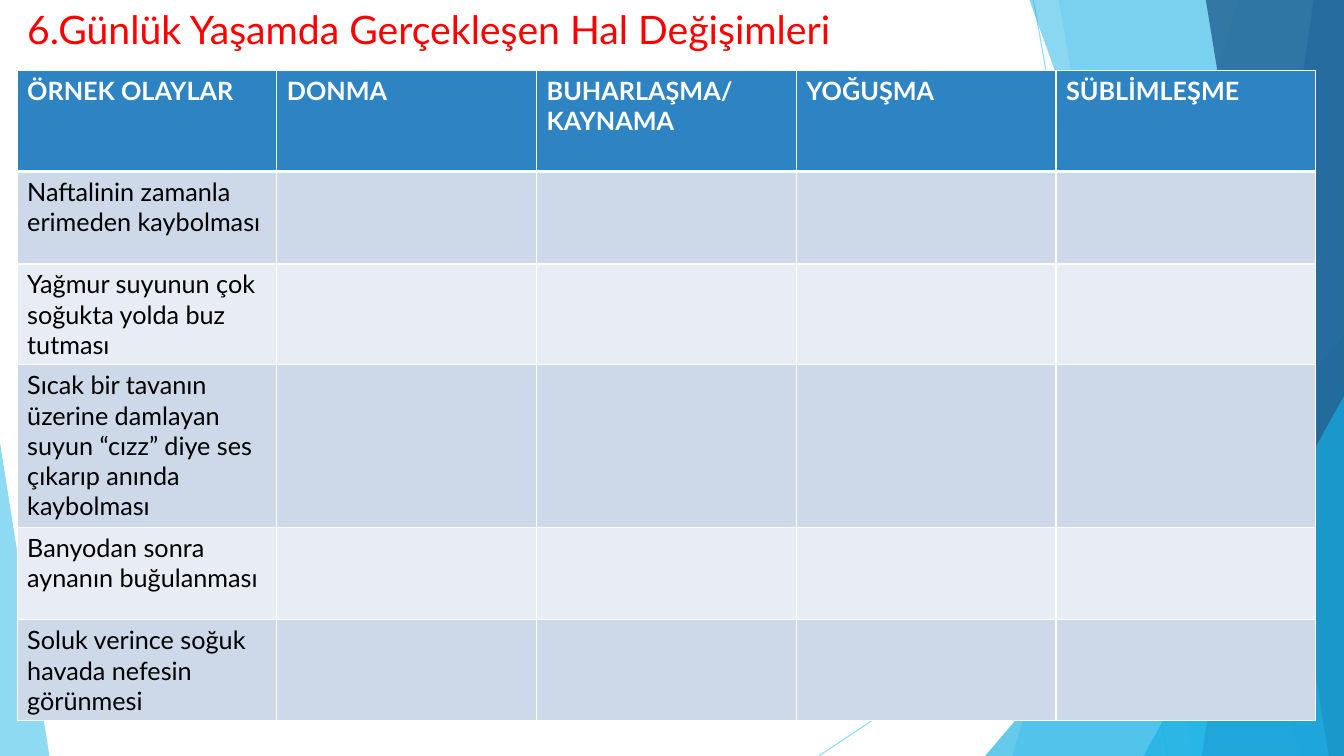
from lxml.etree import SubElement
from pptx import Presentation
from pptx.dml.color import RGBColor
from pptx.enum.shapes import MSO_CONNECTOR, MSO_SHAPE
from pptx.enum.text import MSO_ANCHOR, PP_ALIGN
from pptx.oxml import parse_xml
from pptx.oxml.ns import nsdecls, qn
from pptx.util import Inches, Pt

FONT = "Lato"
RED = RGBColor(0xFF, 0x00, 0x00)
WHITE = RGBColor(0xFF, 0xFF, 0xFF)
BLACK = RGBColor(0x00, 0x00, 0x00)
SKY = RGBColor(0x5F, 0xCB, 0xEF)
CYAN = RGBColor(0x17, 0xB0, 0xE4)
BLUE = RGBColor(0x2E, 0x83, 0xC3)
NAVY = RGBColor(0x22, 0x62, 0x92)
BANDS = [RGBColor(0xCD, 0xD9, 0xE9), RGBColor(0xE8, 0xED, 0xF5)]

WIDTH, HEIGHT = 13.33, 7.5

TITLE = "6.Günlük Yaşamda Gerçekleşen Hal Değişimleri"
HEADINGS = [["ÖRNEK OLAYLAR"], ["DONMA"], ["BUHARLAŞMA/", "KAYNAMA"],
            ["YOĞUŞMA"], ["SÜBLİMLEŞME"]]
EVENTS = [
    "Naftalinin zamanla erimeden kaybolması",
    "Yağmur suyunun çok soğukta yolda buz tutması",
    "Sıcak bir tavanın üzerine damlayan suyun “cızz” diye ses çıkarıp anında kaybolması",
    "Banyodan sonra aynanın buğulanması",
    "Soluk verince soğuk havada nefesin görünmesi",
]
ROW_HEIGHTS = [1, 0.92, 1, 1.61, 0.92, 1]
TABLE_LEFT, TABLE_TOP, TABLE_WIDTH = 0.17, 0.7, 12.88

# start x, start y, end x, end y
RAYS = [(10.25, 0, 11.58, HEIGHT), (WIDTH, 4.03, 8.12, HEIGHT)]
# Bands reach the right edge: ("band", x of left edge at top, at bottom, colour, opacity)
# Triangles stand on the bottom: ("triangle", left, top, width, apex, colour, opacity)
FACETS = [
    ("band", 12.28, 10.04, SKY, 36),
    ("band", 10.5, 11.83, SKY, 20),
    ("triangle", 9.77, 3.33, 3.56, 1, CYAN, 66),
    ("band", 10.21, 12.91, CYAN, 50),
    ("band", 13.03, 11.92, BLUE, 70),
    ("band", 11.96, 13.18, NAVY, 80),
    ("triangle", 11.34, 3.93, 1.99, 1, CYAN, 66),
    ("triangle", 0, 4.39, 0.49, 0, SKY, 70),
]


def set_opacity(element, percent):
    colour = next(element.iter(qn("a:srgbClr")))
    SubElement(colour, qn("a:alpha"), val=str(percent * 1000))


def add_ray(shapes, x1, y1, x2, y2):
    ray = shapes.add_connector(MSO_CONNECTOR.STRAIGHT, *map(Inches, (x1, y1, x2, y2)))
    ray.line.color.rgb = SKY
    ray.line.width = Pt(0.75)
    properties = ray._element.spPr
    set_opacity(properties, 70)
    SubElement(properties, qn("a:effectLst"))


def add_facet(shapes, kind, *details):
    *geometry, colour, opacity = details
    if kind == "band":
        top_x, bottom_x = geometry
        outline = shapes.build_freeform(Inches(top_x), 0)
        corners = [(WIDTH, 0), (WIDTH, HEIGHT), (bottom_x, HEIGHT)]
        outline.add_line_segments([(Inches(x), Inches(y)) for x, y in corners], close=True)
        facet = outline.convert_to_shape()
    else:
        left, top, width, apex = geometry
        facet = shapes.add_shape(MSO_SHAPE.ISOSCELES_TRIANGLE, Inches(left), Inches(top),
                                 Inches(width), Inches(HEIGHT - top))
        facet.adjustments[0] = apex
    facet.shadow.inherit = False
    facet.fill.solid()
    facet.fill.fore_color.rgb = colour
    facet.line.fill.background()
    set_opacity(facet._element.spPr, opacity)


def add_text(paragraph, text, size, colour, bold=False):
    paragraph.alignment = PP_ALIGN.LEFT
    run = paragraph.add_run()
    run.text = text
    run.font.name = FONT
    run.font.size = Pt(size)
    run.font.color.rgb = colour
    run.font.bold = bold


def set_borders(cell, **points):
    """Draw white borders; the keywords L, R, T, B give widths in points."""
    properties = cell._tc.get_or_add_tcPr()
    for index, side in enumerate("LRTB"):
        border = parse_xml(
            f'<a:ln{side} {nsdecls("a")} w="{Pt(points.get(side, 1))}"><a:solidFill>'
            f'<a:srgbClr val="{WHITE}"/></a:solidFill></a:ln{side}>')
        properties.insert(index, border)


def add_events_table(shapes):
    rows = [HEADINGS] + [[[event]] + [[]] * (len(HEADINGS) - 1) for event in EVENTS]
    table = shapes.add_table(len(rows), len(HEADINGS), Inches(TABLE_LEFT), Inches(TABLE_TOP),
                             Inches(TABLE_WIDTH), Inches(sum(ROW_HEIGHTS))).table
    for column in table.columns:
        column.width = Inches(TABLE_WIDTH / len(HEADINGS))
    for r, (row, height) in enumerate(zip(rows, ROW_HEIGHTS)):
        table.rows[r].height = Inches(height)
        is_header = r == 0
        for c, lines in enumerate(row):
            cell = table.cell(r, c)
            cell.fill.solid()
            cell.fill.fore_color.rgb = BLUE if is_header else BANDS[(r - 1) % 2]
            set_borders(cell, T=3 if r == 1 else 1, B=3 if is_header else 1)
            frame = cell.text_frame
            for i, line in enumerate(lines):
                paragraph = frame.add_paragraph() if i else frame.paragraphs[0]
                add_text(paragraph, line, 18, WHITE if is_header else BLACK, is_header)


def main():
    presentation = Presentation()
    presentation.slide_width = Inches(WIDTH)
    presentation.slide_height = Inches(HEIGHT)
    slide = presentation.slides.add_slide(presentation.slide_layouts[5])
    shapes = slide.shapes

    for ray in RAYS:
        add_ray(shapes, *ray)
    for facet in FACETS:
        add_facet(shapes, *facet)

    title = shapes.title
    title.left, title.top, title.width, title.height = map(Inches, (0.17, 0, 9.97, 1.38))
    title.text_frame.vertical_anchor = MSO_ANCHOR.TOP
    add_text(title.text_frame.paragraphs[0], TITLE, 28, RED)
    shapes._spTree.append(title._element)  # in front of the facets

    add_events_table(shapes)
    presentation.save("out.pptx")


if __name__ == "__main__":
    main()
